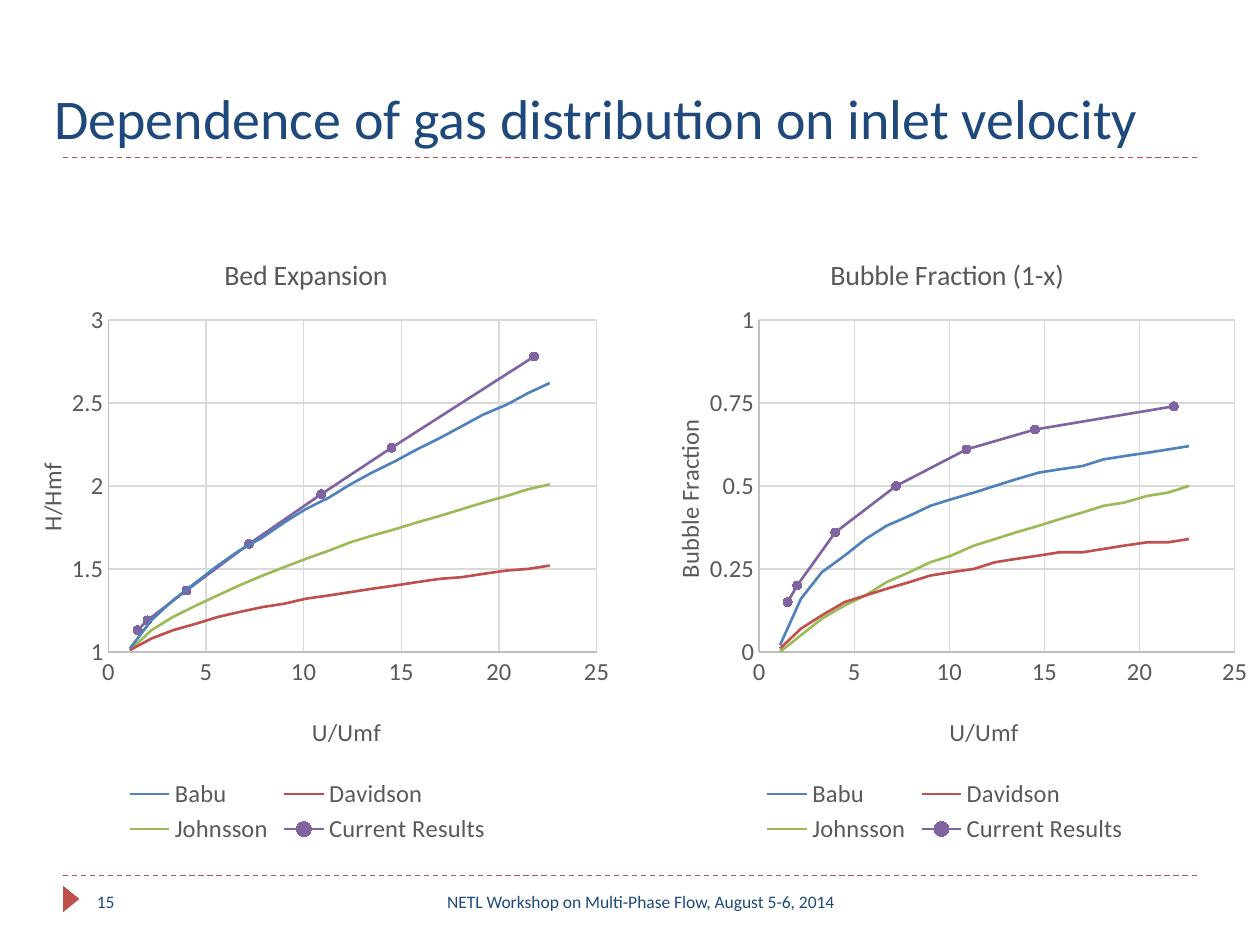
from lxml import etree
from pptx import Presentation
from pptx.chart.data import XyChartData
from pptx.dml.color import RGBColor
from pptx.enum import chart as charts, dml, shapes, text
from pptx.oxml.ns import qn
from pptx.util import Inches, Pt

FONT = "Calibri"
NAVY = RGBColor(0x1F, 0x49, 0x7D)
BLUE = RGBColor(0x4F, 0x81, 0xBD)
RED = RGBColor(0xC0, 0x50, 0x4D)
GREEN = RGBColor(0x9B, 0xBB, 0x59)
PURPLE = RGBColor(0x80, 0x64, 0xA2)
GRAY = RGBColor(0x59, 0x59, 0x59)
AXIS_GRAY = RGBColor(0xBF, 0xBF, 0xBF)
GRID_GRAY = RGBColor(0xD9, 0xD9, 0xD9)

MODEL_COLORS = {"Babu": BLUE, "Davidson": RED, "Johnsson": GREEN}
MODEL_VELOCITIES = [1.1, 2.2, 3.3, 4.5, 5.6, 6.7, 7.9, 9, 10.1, 11.3,
                    12.4, 13.5, 14.7, 15.8, 17, 18.1, 19.2, 20.4, 21.5, 22.6]
RESULT_NAME = "Current Results"
RESULT_VELOCITIES = [1.5, 2, 4, 7.2, 10.9, 14.5, 21.8]

BED_EXPANSION = {
    "Babu": [1.02, 1.19, 1.31, 1.42, 1.52, 1.61, 1.69, 1.78, 1.86, 1.93,
             2.01, 2.08, 2.15, 2.22, 2.29, 2.36, 2.43, 2.49, 2.56, 2.62],
    "Davidson": [1.01, 1.08, 1.13, 1.17, 1.21, 1.24, 1.27, 1.29, 1.32, 1.34,
                 1.36, 1.38, 1.4, 1.42, 1.44, 1.45, 1.47, 1.49, 1.5, 1.52],
    "Johnsson": [1.01, 1.13, 1.21, 1.28, 1.34, 1.4, 1.46, 1.51, 1.56, 1.61,
                 1.66, 1.7, 1.74, 1.78, 1.82, 1.86, 1.9, 1.94, 1.98, 2.01],
    RESULT_NAME: [1.13, 1.19, 1.37, 1.65, 1.95, 2.23, 2.78],
}
BUBBLE_FRACTION = {
    "Babu": [0.02, 0.16, 0.24, 0.29, 0.34, 0.38, 0.41, 0.44, 0.46, 0.48,
             0.5, 0.52, 0.54, 0.55, 0.56, 0.58, 0.59, 0.6, 0.61, 0.62],
    "Davidson": [0.01, 0.07, 0.11, 0.15, 0.17, 0.19, 0.21, 0.23, 0.24, 0.25,
                 0.27, 0.28, 0.29, 0.3, 0.3, 0.31, 0.32, 0.33, 0.33, 0.34],
    "Johnsson": [0, 0.05, 0.1, 0.14, 0.17, 0.21, 0.24, 0.27, 0.29, 0.32,
                 0.34, 0.36, 0.38, 0.4, 0.42, 0.44, 0.45, 0.47, 0.48, 0.5],
    RESULT_NAME: [0.15, 0.2, 0.36, 0.5, 0.61, 0.67, 0.74],
}


def style_font(font, size, color):
    font.name, font.size, font.bold = FONT, Pt(size), False
    font.color.rgb = color


def write(frame, content, size=10, color=NAVY, align=text.PP_ALIGN.LEFT,
          anchor=text.MSO_ANCHOR.TOP):
    frame.word_wrap = True
    frame.vertical_anchor = anchor
    paragraph = frame.paragraphs[0]
    paragraph.alignment = align
    run = paragraph.add_run()
    run.text = content
    style_font(run.font, size, color)


def add_rule(slide, left, top, width):
    line = slide.shapes.add_connector(shapes.MSO_CONNECTOR.STRAIGHT,
                                      left, top, left + width, top)
    line.line.color.rgb = RED
    line.line.width = Pt(0.75)
    line.line.dash_style = dml.MSO_LINE.DASH
    properties = line._element.spPr
    etree.SubElement(properties, qn("a:effectLst"))


def add_header(slide, left, top, width, height):
    title = slide.shapes.title
    title.left, title.top, title.width, title.height = left, top, width, height
    write(title.text_frame, "Dependence of gas distribution on inlet velocity",
          size=32, anchor=text.MSO_ANCHOR.BOTTOM)
    add_rule(slide, Inches(0.5), top + height, Inches(9))


def add_footer(slide, left, top, width):
    add_rule(slide, left, top, width)
    marker = slide.shapes.add_shape(
        shapes.MSO_SHAPE.ISOSCELES_TRIANGLE, left - Inches(0.04),
        top + Inches(0.12), Inches(0.21), Inches(0.13))
    marker.rotation = 90
    marker.shadow.inherit = False
    marker.fill.solid()
    marker.fill.fore_color.rgb = RED
    marker.line.fill.background()
    for content, offset, box_width, align in (
            ("15", 0.17, 2.17, text.PP_ALIGN.LEFT),
            ("NETL Workshop on Multi-Phase Flow, August 5-6, 2014",
             2.67, 3.83, text.PP_ALIGN.CENTER)):
        box = slide.shapes.add_textbox(left + Inches(offset), top + Inches(0.07),
                                       Inches(box_width), Inches(0.4))
        write(box.text_frame, content, align=align)


def set_layout(parent, index, inner=False, **fractions):
    """Place a chart part by fractions (x, y, w, h) of the chart's size."""
    for old in parent.findall(qn("c:layout")):
        parent.remove(old)
    layout = etree.Element(qn("c:layout"))
    manual = etree.SubElement(layout, qn("c:manualLayout"))
    if inner:
        etree.SubElement(manual, qn("c:layoutTarget"), val="inner")
    for key in ("x", "y"):
        etree.SubElement(manual, qn(f"c:{key}Mode"), val="edge")
    for key, value in fractions.items():
        etree.SubElement(manual, qn(f"c:{key}"), val=str(value))
    parent.insert(index, layout)


def add_chart_title(owner, content, size, x, y):
    """Title a chart or an axis, with its corner at fractions x and y."""
    title = owner.chart_title if hasattr(owner, "chart_title") else owner.axis_title
    write_run = title.text_frame.paragraphs[0].add_run()
    write_run.text = content
    style_font(write_run.font, size, GRAY)
    set_layout(title._element, 1, x=x, y=y)


def style_axis(axis, low, high, step):
    axis.minimum_scale, axis.maximum_scale, axis.major_unit = low, high, step
    axis.major_tick_mark = axis.minor_tick_mark = charts.XL_TICK_MARK.NONE
    axis.has_major_gridlines = True
    for line, color in ((axis.format.line, AXIS_GRAY),
                        (axis.major_gridlines.format.line, GRID_GRAY)):
        line.color.rgb = color
        line.width = Pt(0.75)
    style_font(axis.tick_labels.font, 14, GRAY)


def style_series(series):
    color = MODEL_COLORS.get(series.name, PURPLE)
    series.smooth = True
    series.format.line.color.rgb = color
    series.format.line.width = Pt(1.5)
    if series.name != RESULT_NAME:
        series.marker.style = charts.XL_MARKER_STYLE.NONE
        return
    series.marker.style = charts.XL_MARKER_STYLE.CIRCLE
    series.marker.size = 5
    series.marker.format.fill.solid()
    series.marker.format.fill.fore_color.rgb = color
    series.marker.format.line.color.rgb = color


def add_velocity_chart(slide, left, top, size, curves, title, title_x,
                       y_title, y_title_top, y_scale, plot_x, plot_width):
    data = XyChartData()
    for name, values in curves.items():
        series = data.add_series(name)
        velocities = RESULT_VELOCITIES if name == RESULT_NAME else MODEL_VELOCITIES
        for velocity, value in zip(velocities, values):
            series.add_data_point(velocity, value)
    chart = slide.shapes.add_chart(charts.XL_CHART_TYPE.XY_SCATTER_SMOOTH_NO_MARKERS,
                                   left, top, size, size, data).chart
    style_font(chart.font, 14, GRAY)
    chart.has_title = True
    add_chart_title(chart, title, 16, title_x, 0.05)
    style_axis(chart.category_axis, 0, 25, 5)
    add_chart_title(chart.category_axis, "U/Umf", 14, 0.5, 0.78)
    style_axis(chart.value_axis, *y_scale)
    add_chart_title(chart.value_axis, y_title, 14, 0.06, y_title_top)
    chart.plots[0].vary_by_categories = False
    for series in chart.plots[0].series:
        style_series(series)
    chart.has_legend = True
    chart.legend.position = charts.XL_LEGEND_POSITION.BOTTOM
    chart.legend.include_in_layout = False
    style_font(chart.legend.font, 14, GRAY)
    plot_area = chart._chartSpace.chart.plotArea
    set_layout(plot_area, 0, inner=True, x=plot_x, y=0.16, w=plot_width, h=0.527)


def main():
    presentation = Presentation()
    presentation.slide_width, presentation.slide_height = Inches(10), Inches(7.5)
    slide = presentation.slides.add_slide(presentation.slide_layouts[5])
    add_header(slide, Inches(0.33), Inches(0.17), Inches(9.17), Inches(1.08))
    add_velocity_chart(slide, Inches(-0.06), Inches(1.74), Inches(5), BED_EXPANSION,
                       "Bed Expansion", 0.36, "H/Hmf", 0.38, (1, 3, 0.5),
                       plot_x=0.184, plot_width=0.775)
    add_velocity_chart(slide, Inches(5), Inches(1.74), Inches(5), BUBBLE_FRACTION,
                       "Bubble Fraction (1-x)", 0.31, "Bubble Fraction", 0.31,
                       (0, 1, 0.25), plot_x=0.205, plot_width=0.755)
    add_footer(slide, Inches(0.5), Inches(6.95), Inches(9))
    presentation.save("out.pptx")


if __name__ == "__main__":
    main()
